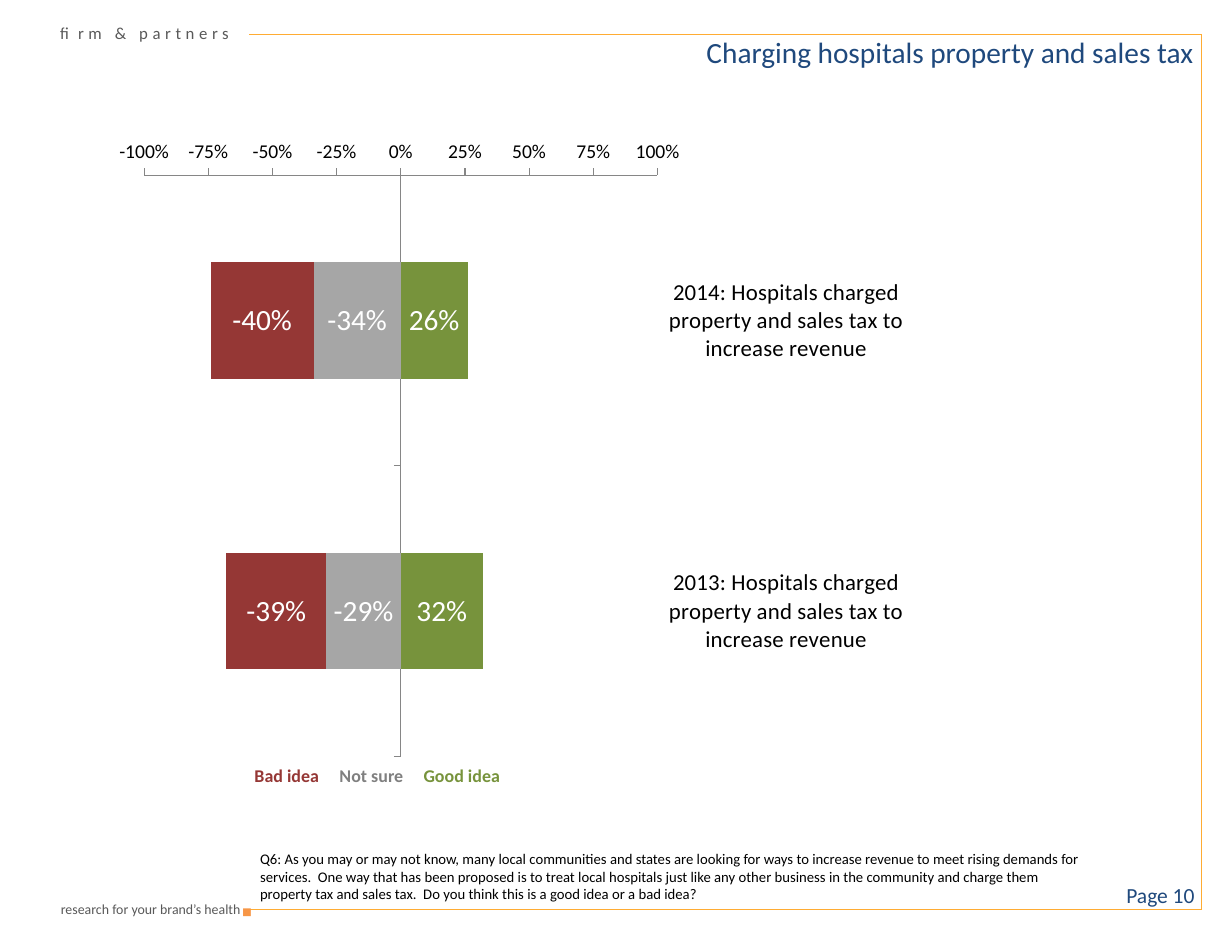
import pptx
import pptx.chart.data
import pptx.dml.color
import pptx.enum.chart
import pptx.enum.shapes
import pptx.enum.text
import pptx.oxml
import pptx.oxml.ns
import pptx.util
from lxml import etree
from pptx.util import Cm

colors = {
    "frame": "FFAC33", "marker": "F79646", "brand": "595959", "title": "1F497D",
    "text": "000000", "white": "FFFFFF", "axis": "868686",
    "bad": "953735", "unsure": "A6A6A6", "unsure_text": "808080", "good": "77933C",
}
ALIGN = pptx.enum.text.PP_ALIGN
ANCHOR = pptx.enum.text.MSO_ANCHOR


def style(font, size, color, bold=False):
    font.name = "Calibri"
    font.size = pptx.util.Pt(size)
    font.bold = bold
    font.color.rgb = pptx.dml.color.RGBColor.from_string(colors[color])


def add_text(text, place, size, color, align=ALIGN.LEFT, anchor=ANCHOR.TOP, wrap=True, inset=0.27):
    box = page.shapes.add_textbox(*[Cm(length) for length in place])
    frame = box.text_frame
    frame.word_wrap = wrap
    frame.vertical_anchor = anchor
    frame.margin_left = frame.margin_right = Cm(inset)
    frame.margin_top = frame.margin_bottom = Cm(0.13)
    para = frame.paragraphs[0]
    para.text = text
    para.alignment = align
    for span in para.runs:
        style(span.font, size, color)
    return para


deck = pptx.Presentation()
deck.slide_width = Cm(26.67)
deck.slide_height = Cm(20.32)
page = deck.slides.add_slide(deck.slide_layouts[6])

corners = [(5.4, 0.74), (26.01, 0.74), (26.01, 19.69), (5.4, 19.69)]
for start, end in zip(corners, corners[1:]):
    line = page.shapes.add_connector(
        pptx.enum.shapes.MSO_CONNECTOR.STRAIGHT, *[Cm(length) for length in start + end])
    line.line.color.rgb = pptx.dml.color.RGBColor.from_string(colors["frame"])
    line.line.width = pptx.util.Pt(0.75)
    etree.SubElement(line._element.spPr, pptx.oxml.ns.qn("a:effectLst"))

add_text("▪", (5, 19.18, 0.71, 1.04), 18.8, "marker", wrap=False, inset=0.23)
add_text("research for your brand’s health", (1.07, 19.35, 4.37, 0.61), 8.5, "brand",
         ALIGN.RIGHT, wrap=False, inset=0.23)
brand = add_text("firm & partners", (1.07, 0.36, 4.5, 0.69), 10.3, "brand", wrap=False, inset=0.23)
brand.runs[0].font._element.set("spc", "280")

data = pptx.chart.data.CategoryChartData(number_format="0%")
data.categories = [
    f"{year}: Hospitals charged property and sales tax to increase revenue" for year in (2014, 2013)]
answers = [
    ("Not sure", (-0.34, -0.29), "unsure"),
    ("Bad idea", (-0.4, -0.39), "bad"),
    ("Good idea", (0.26, 0.32), "good"),
]
for name, values, color in answers:
    data.add_series(name, values)
chart = page.shapes.add_chart(
    pptx.enum.chart.XL_CHART_TYPE.BAR_STACKED,
    Cm(2.44), Cm(2.72), Cm(22.68), Cm(15.34), data).chart
chart.has_title = False
chart.has_legend = False
style(chart.font, 18, "text")

plot = chart.plots[0]
plot.gap_width = 150
plot.overlap = 100
plot.vary_by_categories = False
for series, (name, values, color) in zip(plot.series, answers):
    series.format.fill.solid()
    series.format.fill.fore_color.rgb = pptx.dml.color.RGBColor.from_string(colors[color])
    series.invert_if_negative = False
    labels = series.data_labels
    labels.show_value = True
    labels.number_format = "0%"
    labels.number_format_is_linked = False
    style(labels.font, 18, "white")

for axis, size in ((chart.category_axis, 14), (chart.value_axis, 12)):
    axis.has_major_gridlines = False
    axis.major_tick_mark = pptx.enum.chart.XL_TICK_MARK.OUTSIDE
    axis.minor_tick_mark = pptx.enum.chart.XL_TICK_MARK.NONE
    axis.format.line.color.rgb = pptx.dml.color.RGBColor.from_string(colors["axis"])
    axis.format.line.width = pptx.util.Pt(0.75)
    style(axis.tick_labels.font, size, "text")
chart.category_axis.reverse_order = True
chart.category_axis.tick_label_position = pptx.enum.chart.XL_TICK_LABEL_POSITION.HIGH
chart.value_axis.minimum_scale = -1
chart.value_axis.maximum_scale = 1
chart.value_axis.major_unit = 0.25
chart.value_axis.tick_labels.number_format = "0%"
chart.value_axis.tick_labels.number_format_is_linked = False

area = chart._chartSpace.chart.plotArea
for layout in area.findall(pptx.oxml.ns.qn("c:layout")):
    area.remove(layout)
layout = pptx.oxml.parse_xml(
    f'<c:layout {pptx.oxml.ns.nsdecls("c")}><c:manualLayout><c:layoutTarget val="inner"/>'
    '<c:xMode val="edge"/><c:yMode val="edge"/><c:x val="0.03"/><c:y val="0.07"/>'
    '<c:w val="0.49"/><c:h val="0.82"/></c:manualLayout></c:layout>')
area.insert(0, layout)

add_text(
    "Q6: As you may or may not know, many local communities and states are looking for ways to "
    "increase revenue to meet rising demands for services.  One way that has been proposed is to "
    "treat local hospitals just like any other business in the community and charge them property "
    "tax and sales tax.  Do you think this is a good idea or a bad idea?",
    (5.36, 18.26, 18.57, 1.42), 9, "text")
add_text("Charging hospitals property and sales tax", (5.46, 0.58, 20.65, 1.07), 18, "title",
         ALIGN.RIGHT, ANCHOR.MIDDLE)
add_text("Page 10", (19.91, 18.82, 6.22, 1.09), 13.2, "title", ALIGN.RIGHT, ANCHOR.MIDDLE)

legend = add_text("", (5.26, 16.41, 7.92, 0.71), 11, "text", inset=0.25)
tabs = etree.SubElement(legend._p.get_or_add_pPr(), pptx.oxml.ns.qn("a:tabLst"))
for stop in (1.84, 3.66):
    etree.SubElement(tabs, pptx.oxml.ns.qn("a:tab"), pos=str(Cm(stop)), algn="l")
for text, color in (("Bad idea\t", "bad"), ("Not sure\t", "unsure_text"), ("Good idea", "good")):
    span = legend.add_run()
    span.text = text
    style(span.font, 11, color, True)

deck.save("out.pptx")
